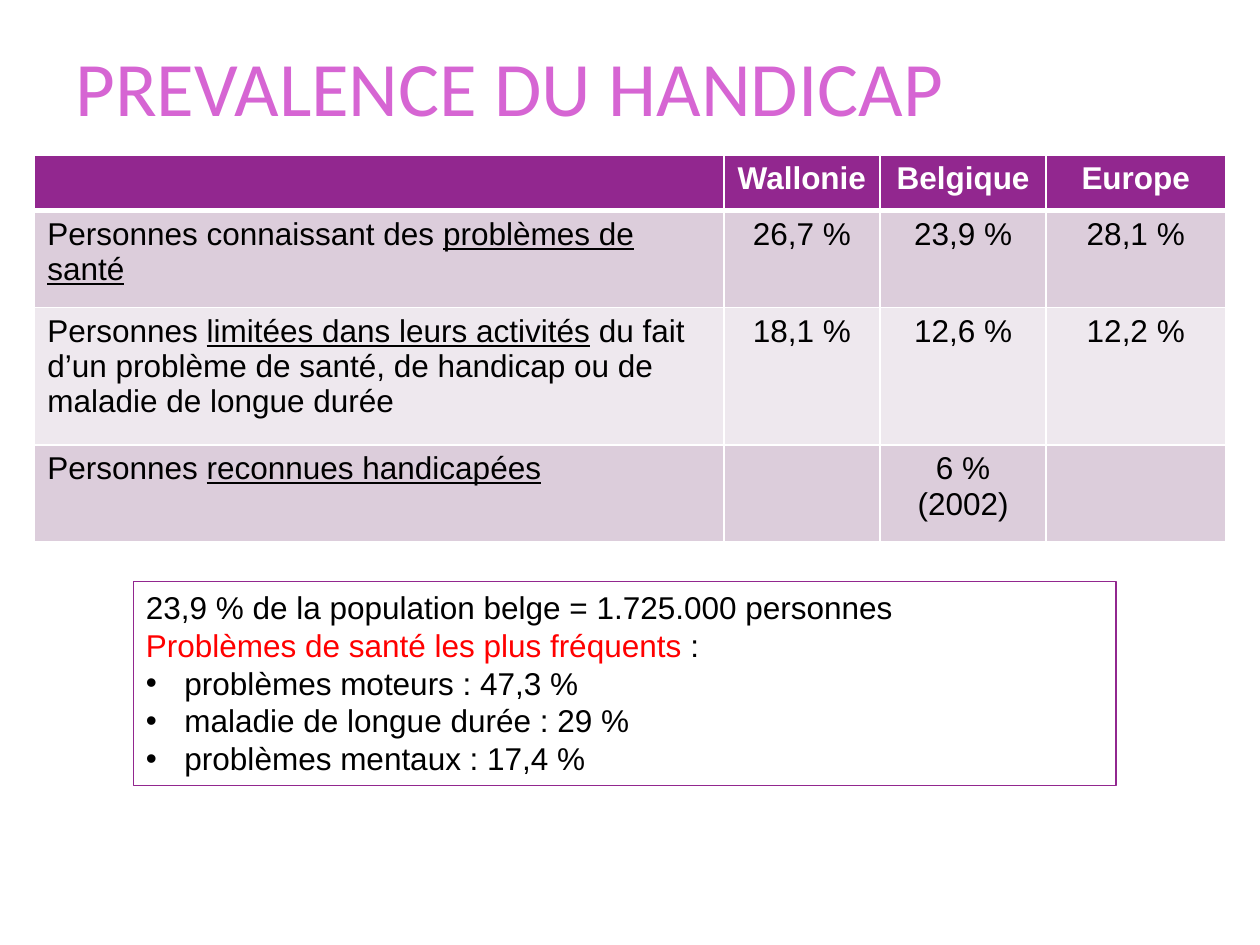
"""Build the slide on the prevalence of disability: a table and a summary box."""
from lxml import etree
from pptx import Presentation
from pptx.dml.color import RGBColor
from pptx.enum import shapes, text
from pptx.oxml import ns
from pptx.util import Cm, Pt

PURPLE = RGBColor(0x92, 0x27, 0x8F)
PINK = RGBColor(0xD6, 0x65, 0xD3)
DARK_BAND = RGBColor(0xDC, 0xCD, 0xDB)
LIGHT_BAND = RGBColor(0xEE, 0xE8, 0xEE)
WHITE = RGBColor(0xFF, 0xFF, 0xFF)
BLACK = RGBColor(0, 0, 0)
RED = RGBColor(0xFF, 0, 0)

TITLE = "PREVALENCE DU HANDICAP"
HEADERS = ["", "Wallonie", "Belgique", "Europe"]
ROWS = [
    ([("Personnes connaissant des ", False), ("problèmes de santé", True)],
     "26,7 %", "23,9 %", "28,1 %"),
    ([("Personnes ", False), ("limitées dans leurs activités", True),
      (" du fait d’un problème de santé, de handicap ou de maladie de longue durée", False)],
     "18,1 %", "12,6 %", "12,2 %"),
    ([("Personnes ", False), ("reconnues handicapées", True)],
     "", "6 % (2002)", ""),
]
COLUMN_WIDTHS = [13.89, 3.15, 3.35, 3.61]
ROW_HEIGHTS = [1.12, 1.96, 2.77, 1.95]
SUMMARY = [
    ([("23,9 % de la population belge = 1.725.000 personnes", BLACK)], False),
    ([("Problèmes de santé les plus fréquents ", RED), (":", BLACK)], False),
    ([("problèmes moteurs : 47,3 %", BLACK)], True),
    ([("maladie de longue durée : 29 %", BLACK)], True),
    ([("problèmes mentaux : 17,4 %", BLACK)], True),
]


def set_font(paragraph, name, size, color):
    paragraph.font.name = name
    paragraph.font.size = Pt(size)
    paragraph.font.color.rgb = color


def add_borders(cell, top, bottom):
    properties = cell._tc.get_or_add_tcPr()
    sides = {"a:lnL": 1, "a:lnR": 1, "a:lnT": top, "a:lnB": bottom}
    for position, (tag, width) in enumerate(sides.items()):
        line = etree.Element(ns.qn(tag), w=str(Pt(width)))
        fill = etree.SubElement(line, ns.qn("a:solidFill"))
        etree.SubElement(fill, ns.qn("a:srgbClr"), val=str(WHITE))
        properties.insert(position, line)


def add_bullet(paragraph):
    properties = paragraph._p.get_or_add_pPr()
    properties.set("marL", str(Cm(0.78)))
    properties.set("indent", str(-Cm(0.78)))
    bullet_font = etree.Element(ns.qn("a:buFont"), typeface="Arial")
    bullet = etree.Element(ns.qn("a:buChar"), char="•")
    properties.insert(0, bullet_font)
    properties.insert(1, bullet)


def add_title(slide):
    box = slide.shapes.add_textbox(Cm(1.27), Cm(0.76), Cm(22.86), Cm(2.16))
    frame = box.text_frame
    frame.word_wrap = True
    frame.vertical_anchor = text.MSO_ANCHOR.MIDDLE
    paragraph = frame.paragraphs[0]
    paragraph.text = TITLE
    paragraph.line_spacing = 0.9
    set_font(paragraph, "Calibri", 44, PINK)


def add_prevalence_table(slide):
    content = [HEADERS, *ROWS]
    table = slide.shapes.add_table(
        len(content), len(HEADERS), Cm(0.7), Cm(3.12),
        Cm(sum(COLUMN_WIDTHS)), Cm(sum(ROW_HEIGHTS))).table
    for column, width in zip(table.columns, COLUMN_WIDTHS):
        column.width = Cm(width)
    for row, height in zip(table.rows, ROW_HEIGHTS):
        row.height = Cm(height)
    for r, values in enumerate(content):
        header = r == 0
        band = PURPLE if header else DARK_BAND if r % 2 else LIGHT_BAND
        for c, value in enumerate(values):
            cell = table.cell(r, c)
            cell.fill.solid()
            cell.fill.fore_color.rgb = band
            add_borders(cell, top=3 if r == 1 else 1, bottom=3 if header else 1)
            paragraph = cell.text_frame.paragraphs[0]
            set_font(paragraph, "Arial", 18, WHITE if header else BLACK)
            paragraph.font.bold = header
            if c:
                paragraph.alignment = text.PP_ALIGN.CENTER
            runs = [(value, False)] if isinstance(value, str) else value
            for words, underlined in runs:
                if words:
                    run = paragraph.add_run()
                    run.text = words
                    run.font.underline = underlined


def add_summary(slide):
    box = slide.shapes.add_shape(
        shapes.MSO_SHAPE.RECTANGLE, Cm(2.69), Cm(11.73), Cm(19.81), Cm(4.11))
    box.shadow.inherit = False
    box.fill.background()
    box.line.color.rgb = PURPLE
    box.line.width = Pt(0.75)
    frame = box.text_frame
    frame.word_wrap = True
    frame.vertical_anchor = text.MSO_ANCHOR.TOP
    for index, (runs, bulleted) in enumerate(SUMMARY):
        paragraph = frame.add_paragraph() if index else frame.paragraphs[0]
        paragraph.alignment = text.PP_ALIGN.LEFT
        set_font(paragraph, "Arial", 18, BLACK)
        if bulleted:
            add_bullet(paragraph)
        for words, color in runs:
            run = paragraph.add_run()
            run.text = words
            run.font.color.rgb = color


def main():
    presentation = Presentation()
    presentation.slide_width = Cm(25.4)
    presentation.slide_height = Cm(19.05)
    slide = presentation.slides.add_slide(presentation.slide_layouts[6])
    add_title(slide)
    add_prevalence_table(slide)
    add_summary(slide)
    presentation.save("out.pptx")


if __name__ == "__main__":
    main()
